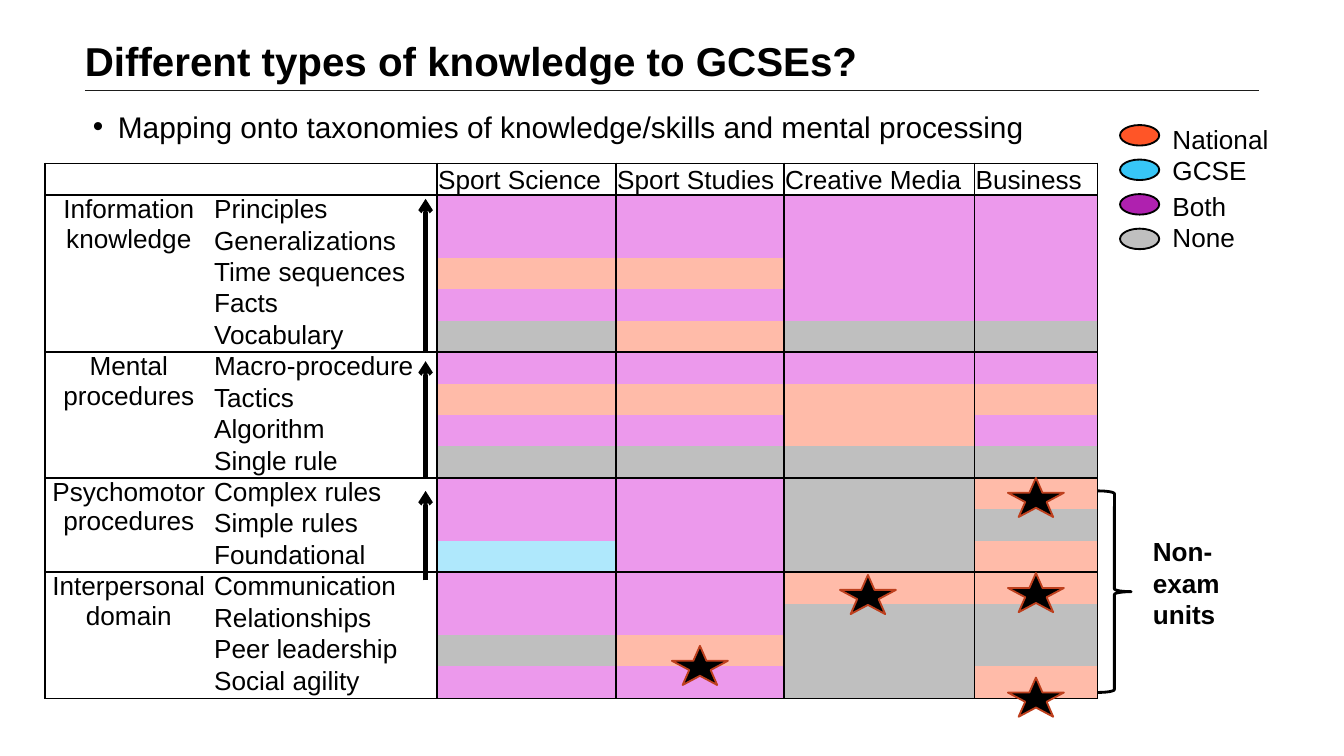
from lxml import etree
from pptx import Presentation
from pptx import util as u
from pptx.dml.color import RGBColor
from pptx.enum import shapes as es, text as et
from pptx.oxml.ns import qn

Pt = u.Pt
FONT = "Arial"
BLACK = "000000"
FILLS = {"B": "EC99EC", "N": "FFBBA9", "G": "AFE8FC", "X": "BFBFBF"}
COLS = [90, 120, 96, 90, 102, 66]
HEADS = ["", "", "Sport Science", "Sport Studies", "Creative Media", "Business"]
GROUPS = [
    (["Information", "knowledge"],
     [("Principles", "BBBB"), ("Generalizations", "BBBB"), ("Time sequences", "NNBB"),
      ("Facts", "BBBB"), ("Vocabulary", "XNXX")]),
    (["Mental procedures"],
     [("Macro-procedure", "BBBB"), ("Tactics", "NNNN"), ("Algorithm", "BBNB"),
      ("Single rule", "XXXX")]),
    (["Psychomotor procedures"],
     [("Complex rules", "BBXN"), ("Simple rules", "BBXX"), ("Foundational", "GBXN")]),
    (["Interpersonal domain"],
     [("Communication", "BBNN"), ("Relationships", "BBXX"), ("Peer leadership", "XNXX"),
      ("Social agility", "BBXN")]),
]
LEGEND = [("National", "FF5527"), ("GCSE", "37C6F7"), ("Both", "AF21AF"), ("None", "BFBFBF")]
STARS = [(540, 256), (540, 307), (450, 308), (360, 346), (540, 363)]
ARROWS = [(189, 106.5), (255.5, 193.5), (311, 263)]


def color(code):
    return RGBColor.from_string(code)


def paint(obj, code):
    if code:
        obj.fill.solid()
        obj.fill.fore_color.rgb = color(code)
    else:
        obj.fill.background()


def stroke(obj, code, width):
    obj.line.color.rgb = color(code)
    obj.line.width = Pt(width)


def write(frame, lines, size, bold=False, align=None):
    for i, line in enumerate(lines):
        para = frame.paragraphs[0] if i == 0 else frame.add_paragraph()
        para.alignment = align
        run = para.add_run()
        run.text = line
        run.font.name = FONT
        run.font.size = Pt(size)
        run.font.bold = bold
        run.font.color.rgb = color(BLACK)


def label(slide, box, lines, size, bold=False, inset=True):
    frame = slide.shapes.add_textbox(*map(Pt, box)).text_frame
    frame.word_wrap = True
    if not inset:
        frame.margin_left = frame.margin_right = 0
        frame.margin_top = frame.margin_bottom = 0
    write(frame, lines, size, bold)
    return frame.paragraphs


def bullet(para, indent):
    props = para._p.get_or_add_pPr()
    props.set("marL", str(Pt(indent)))
    props.set("indent", str(-Pt(indent)))
    etree.SubElement(props, qn("a:buFont")).set("typeface", FONT)
    etree.SubElement(props, qn("a:buChar")).set("char", "•")


def shape(slide, kind, box, fill, edge, width):
    item = slide.shapes.add_shape(kind, *map(Pt, box))
    item.shadow.inherit = False
    paint(item, fill)
    stroke(item, edge, width)


def line(slide, ends, code, width, arrow=False):
    item = slide.shapes.add_connector(es.MSO_CONNECTOR.STRAIGHT, *map(Pt, ends))
    stroke(item, code, width)
    if arrow:
        etree.SubElement(item.line._get_or_add_ln(), qn("a:tailEnd")).set("type", "arrow")
    etree.SubElement(item._element.spPr, qn("a:effectLst"))


def border(cell, sides):
    props = cell._tc.get_or_add_tcPr()
    for side in "LRTB":
        shown = side in sides
        edge = etree.SubElement(props, qn("a:ln" + side), w=str(Pt(1) if shown else 0))
        if shown:
            fill = etree.SubElement(edge, qn("a:solidFill"))
            etree.SubElement(fill, qn("a:srgbClr")).set("val", BLACK)
        else:
            etree.SubElement(edge, qn("a:noFill"))


def fill_cell(cell, lines, fill, sides, align=None, low=False):
    border(cell, sides)
    paint(cell, fill)
    cell.margin_left = cell.margin_right = Pt(0.7)
    cell.margin_top = cell.margin_bottom = 0
    if low:
        cell.vertical_anchor = et.MSO_ANCHOR.BOTTOM
    if any(lines):
        write(cell.text_frame, lines, 14, align=align)
    else:
        end = cell.text_frame.paragraphs[0]._p.get_or_add_endParaRPr()
        end.set("sz", "1000")


def uprights(col):
    return {0: "L", 1: "R"}.get(col, "LR")


def grid(slide):
    count = 1 + sum(len(rows) for _, rows in GROUPS)
    height, foot = 13, 17.3
    frame = slide.shapes.add_table(count, len(COLS), Pt(24), Pt(87.6), Pt(sum(COLS)),
                                   Pt((count - 1) * height + foot))
    table = frame.table
    table.first_row = table.horz_banding = False
    for col, width in zip(table.columns, COLS):
        col.width = Pt(width)
    for row in table.rows:
        row.height = Pt(height)
    table.rows[count - 1].height = Pt(foot)
    for col, head in enumerate(HEADS):
        fill_cell(table.cell(0, col), [head], "FFFFFF", uprights(col) + "TB", low=True)
    top = 1
    for name, rows in GROUPS:
        last = top + len(rows) - 1
        for at, (title, codes) in enumerate(rows, top):
            rule = ("T" if at == top else "") + ("B" if at == last else "")
            fill_cell(table.cell(at, 0), name if at == top else [], "FFFFFF",
                      "LTB" if at == top else "L" + rule, et.PP_ALIGN.CENTER)
            fill_cell(table.cell(at, 1), [title], None, "R" + rule)
            for col, code in enumerate(codes, 2):
                fill_cell(table.cell(at, col), [], FILLS[code], uprights(col) + rule)
        table.cell(top, 0).merge(table.cell(last, 0))
        top = last + 1


def legend(slide):
    for i, (_, code) in enumerate(LEGEND):
        shape(slide, es.MSO_SHAPE.OVAL, (600, 67 + 18.5 * i, 21, 11), code, BLACK, 1)
    paras = label(slide, (621, 62.6, 81, 80), [name for name, _ in LEGEND], 14)
    paras[2].space_before = Pt(2.3)


def main():
    deck = Presentation()
    deck.slide_width, deck.slide_height = Pt(720), Pt(405)
    slide = deck.slides.add_slide(deck.slide_layouts[6])
    line(slide, (45.5, 48.5, 674.5, 48.5), "1D1D1B", 0.52)
    title = label(slide, (45.5, 22.3, 629, 26), ["Different types of knowledge to GCSEs?"],
                  21.6, True, False)
    title[0].line_spacing = 0.9
    grid(slide)
    body = label(slide, (49.7, 58.3, 544, 37.5),
                 ["Mapping onto taxonomies of knowledge/skills and mental processing"],
                 16, inset=False)
    bullet(body[0], 13.5)
    shape(slide, es.MSO_SHAPE.RIGHT_BRACE, (588, 263, 18, 108), None, BLACK, 1.5)
    label(slide, (610.5, 283.5, 65.5, 58), ["Non-exam units"], 14, True)
    for x, y in STARS:
        shape(slide, es.MSO_SHAPE.STAR_5_POINT, (x, y, 30, 21), BLACK, "BD3F1D", 1)
    for low, high in ARROWS:
        line(slide, (228, low, 228, high), BLACK, 2.25, True)
    legend(slide)
    deck.save("out.pptx")


if __name__ == "__main__":
    main()
